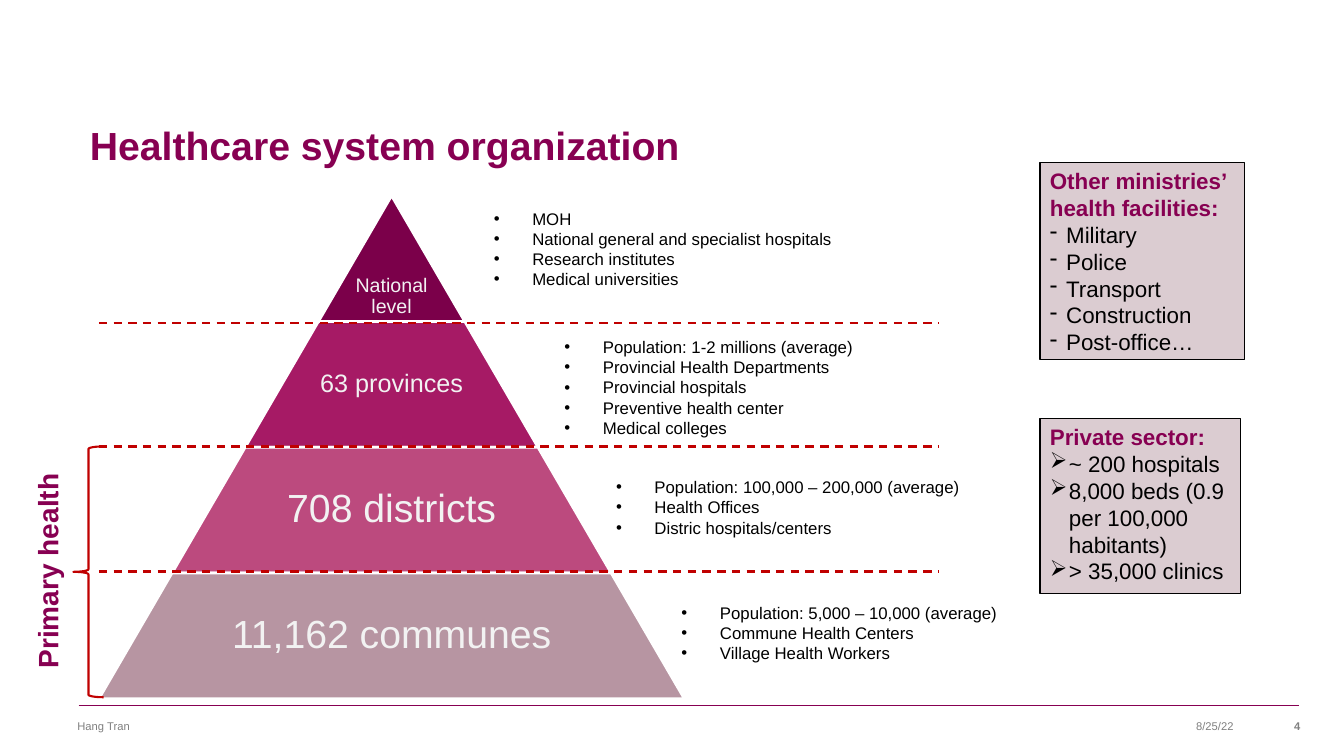
from dataclasses import dataclass

from lxml import etree
from pptx import Presentation
from pptx import util as u
from pptx.dml.color import RGBColor
from pptx.enum import dml, shapes, text
from pptx.oxml import ns


@dataclass(frozen=True)
class Theme:
    font: str = "Arial"
    plum: str = "870052"
    red: str = "C00000"
    panel: str = "DBCCD1"
    pale: str = "F2F2F2"
    grey: str = "808080"
    black: str = "000000"
    white: str = "FFFFFF"
    tiers: tuple = ("7B004A", "A61A65", "BC4A7E", "B795A2")
    title: int = 28
    label: int = 20
    side: int = 16
    body: int = 12
    small: int = 8


THEME = Theme()
LEFT, CENTER, RIGHT = text.PP_ALIGN.LEFT, text.PP_ALIGN.CENTER, text.PP_ALIGN.RIGHT
TOP, MIDDLE, BOTTOM = text.MSO_ANCHOR.TOP, text.MSO_ANCHOR.MIDDLE, text.MSO_ANCHOR.BOTTOM


def cm(*lengths):
    return [u.Cm(length) for length in lengths]


def write(frame, lines, size, color=THEME.black, bold=False, align=LEFT, anchor=TOP,
          spacing=1.0, bullet=None, indent=0, margin=None, append=False):
    frame.word_wrap = True
    frame.auto_size = text.MSO_AUTO_SIZE.NONE
    frame.vertical_anchor = anchor
    if margin is not None:
        frame.margin_left = frame.margin_right = u.Cm(margin)
        frame.margin_top = frame.margin_bottom = u.Cm(margin)
    for index, line in enumerate(lines):
        para = frame.add_paragraph() if append or index else frame.paragraphs[0]
        para.alignment = align
        para.line_spacing = spacing
        para.space_before = para.space_after = u.Pt(0)
        if bullet:
            props = para._p.get_or_add_pPr()
            props.set("marL", str(u.Cm(indent)))
            props.set("indent", str(-u.Cm(indent)))
            etree.SubElement(props, ns.qn("a:buChar")).set("char", bullet)
        span = para.add_run()
        span.text = line
        span.font.name = THEME.font
        span.font.size = u.Pt(size)
        span.font.bold = bold
        span.font.color.rgb = RGBColor.from_string(color)


def add_text(page, box, lines, size, **style):
    label = page.shapes.add_textbox(*cm(*box))
    write(label.text_frame, lines, size, **style)
    return label


def add_block(page, kind, box, fill, line, width):
    block = page.shapes.add_shape(kind, *cm(*box))
    block.shadow.inherit = False
    if fill:
        block.fill.solid()
        block.fill.fore_color.rgb = RGBColor.from_string(fill)
    else:
        block.fill.background()
    block.line.color.rgb = RGBColor.from_string(line)
    block.line.width = u.Pt(width)
    return block


def add_rule(page, left, right, y, color, width, dash=None):
    rule = page.shapes.add_connector(shapes.MSO_CONNECTOR.STRAIGHT, *cm(left, y, right, y))
    rule.line.color.rgb = RGBColor.from_string(color)
    rule.line.width = u.Pt(width)
    rule.line.dash_style = dash
    etree.SubElement(rule._element.spPr, ns.qn("a:effectLst"))


def place(holder, box):
    holder.left, holder.top, holder.width, holder.height = cm(*box)
    return holder.text_frame


def draw_title(page, box):
    write(place(page.shapes.title, box), ["Healthcare system organization"],
          THEME.title, color=THEME.plum, bold=True)


def draw_pyramid(page, box, levels):
    left, top, width, height = box
    step = height / len(levels)
    slope = width / 2 / len(levels)
    for index, (lines, size, anchor) in enumerate(levels):
        half = slope * (index + 1)
        tier_box = (left + width / 2 - half, top + index * step, 2 * half, step)
        tier = add_block(page, shapes.MSO_SHAPE.TRAPEZOID, tier_box,
                         THEME.tiers[index], THEME.white, 2)
        tier.adjustments[0] = slope / min(2 * half, step)
        add_text(page, tier_box, lines, size, color=THEME.pale, align=CENTER,
                 anchor=anchor, spacing=0.9, margin=0.08)


def draw_details(page, details):
    holders = [holder for holder in page.placeholders if holder.placeholder_format.idx]
    for holder, (box, lines) in zip(holders, details):
        write(place(holder, box), lines, THEME.body, bullet="•", indent=0.97)


def draw_panel(page, box, heading, lines, bullet, indent):
    panel = add_block(page, shapes.MSO_SHAPE.RECTANGLE, box, THEME.panel, THEME.black, 0.75)
    write(panel.text_frame, [heading], THEME.side, color=THEME.plum, bold=True)
    write(panel.text_frame, lines, THEME.side, bullet=bullet, indent=indent, append=True)


def draw_primary_health(page, box):
    left, top, width, height = box
    add_block(page, shapes.MSO_SHAPE.LEFT_BRACE, box, None, THEME.red, 1.5)
    length, depth = 6.83, 1.7
    center_x, center_y = left - 0.36, top + height / 2 - 0.73
    label = add_text(page, (center_x - length / 2, center_y - depth / 2, length, depth),
                     ["Primary health"], THEME.label, color=THEME.plum, bold=True)
    label.rotation = 270


def draw_footer(page, box):
    left, top, width, height = box
    add_rule(page, left + 0.28, left + width - 0.28, top - 0.2, THEME.plum, 0.75)
    right = left + width
    for start, span, line, align, bold in (
            (left, 10.72, "Hang Tran", LEFT, False),
            (right - 8.74, 7.06, "8/25/22", RIGHT, False),
            (right - 2.54, 2.54, "4", RIGHT, True)):
        add_text(page, (start, top, span, height), [line], THEME.small,
                 color=THEME.grey, align=align, bold=bold, anchor=MIDDLE)


def main():
    deck = Presentation()
    deck.slide_width, deck.slide_height = cm(33.87, 19.05)
    page = deck.slides.add_slide(deck.slide_layouts.get_by_name("Comparison"))

    draw_title(page, (2.01, 2.92, 28.78, 3.18))
    draw_pyramid(page, (2.49, 4.93, 14.76, 12.68), [
        (["National", "level"], 14, BOTTOM),
        (["63 provinces"], 18, MIDDLE),
        (["708 districts"], 28, MIDDLE),
        (["11,162 communes"], 28, MIDDLE),
    ])
    draw_details(page, [
        ((12.19, 5.13, 11.76, 2.31),
         ["MOH", "National general and specialist hospitals", "Research institutes",
          "Medical universities"]),
        ((13.97, 8.36, 9.02, 2.82),
         ["Population: 1-2 millions (average)", "Provincial Health Departments",
          "Provincial hospitals", "Preventive health center", "Medical colleges"]),
        ((15.27, 11.89, 9.63, 1.8),
         ["Population: 100,000 – 200,000 (average)", "Health Offices",
          "Distric hospitals/centers"]),
        ((16.92, 15.06, 9.63, 1.8),
         ["Population: 5,000 – 10,000 (average)", "Commune Health Centers",
          "Village Health Workers"]),
    ])
    draw_panel(page, (26.21, 4.09, 5.16, 4.98), "Other ministries’ health facilities:",
               ["Military", "Police", "Transport", "Construction", "Post-office…"], "-", 0.41)
    draw_panel(page, (26.21, 10.54, 5.05, 4.42), "Private sector:",
               ["~ 200 hospitals", "8,000 beds (0.9 per 100,000 habitants)",
                "> 35,000 clinics"], "➢", 0.48)
    for y in (8.15, 11.25, 14.4):
        add_rule(page, 2.49, 23.65, y, THEME.red, 1.5, dml.MSO_LINE.DASH)
    draw_primary_health(page, (1.85, 11.25, 0.76, 6.32))
    draw_footer(page, (1.7, 17.98, 31.32, 0.64))
    deck.save("out.pptx")


if __name__ == "__main__":
    main()
